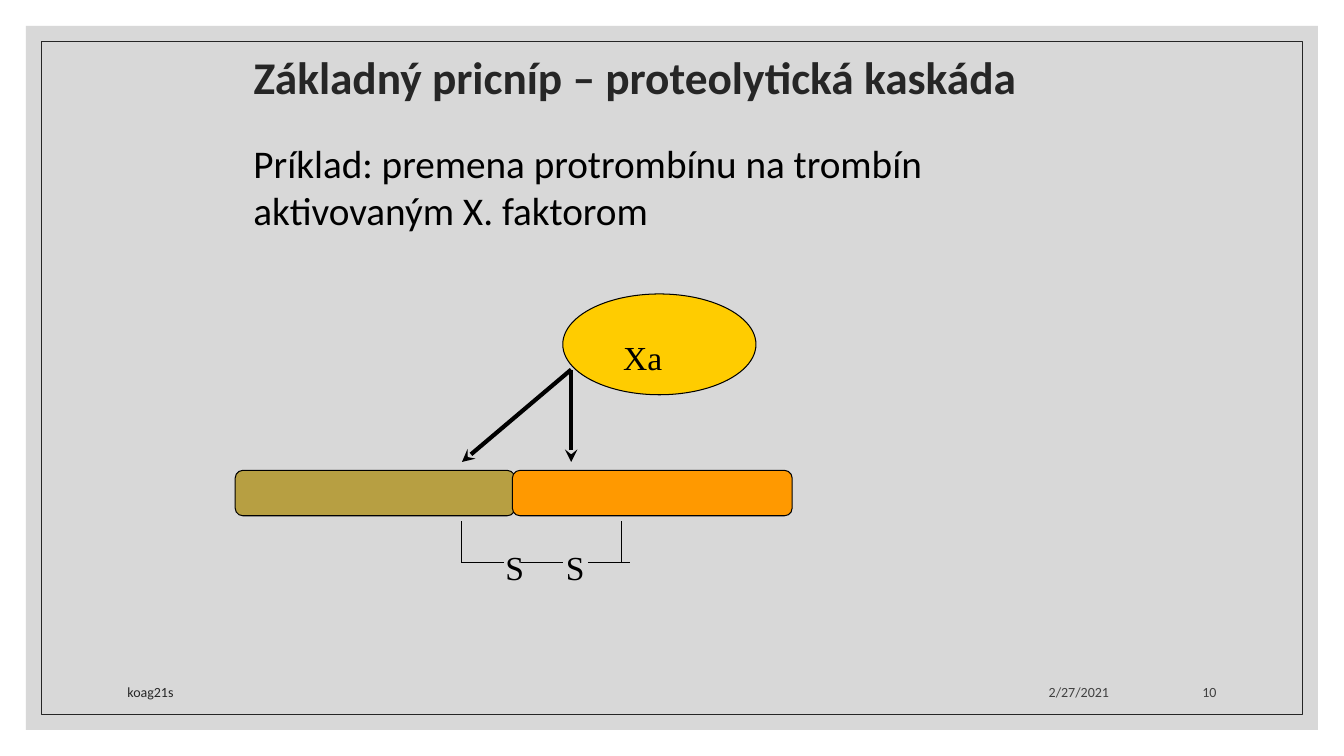
from lxml.etree import SubElement
from pptx import Presentation
from pptx.dml.color import RGBColor
from pptx.enum.shapes import MSO_CONNECTOR, MSO_SHAPE
from pptx.enum.text import MSO_ANCHOR, PP_ALIGN
from pptx.oxml.ns import qn
from pptx.util import Inches, Pt

BLACK = RGBColor(0x00, 0x00, 0x00)
DARK = RGBColor(0x26, 0x26, 0x26)
SOFT = RGBColor(0x40, 0x40, 0x40)
GREY = RGBColor(0xBF, 0xBF, 0xBF)
OLIVE = RGBColor(0xB7, 0x9F, 0x42)
ORANGE = RGBColor(0xFF, 0x99, 0x00)
GOLD = RGBColor(0xFF, 0xCC, 0x00)
SANS, SERIF = "Calibri", "Times New Roman"
COLS, ROWS = 160, 90
CELL = Inches(1) / 12

deck = Presentation()
deck.slide_width, deck.slide_height = int(COLS * CELL), int(ROWS * CELL)
slide = deck.slides.add_slide(deck.slide_layouts[6])


def write(words, box, size, color, font=SANS, bold=False,
          anchor=MSO_ANCHOR.TOP, align=PP_ALIGN.LEFT, pitch=1.0):
    frame = slide.shapes.add_textbox(*[int(n * CELL) for n in box]).text_frame
    frame.word_wrap = True
    frame.vertical_anchor = anchor
    para = frame.paragraphs[0]
    para.alignment, para.line_spacing = align, pitch
    run = para.add_run()
    run.text = words
    run.font.name, run.font.size, run.font.bold = font, Pt(size), bold
    run.font.color.rgb = color


def link(start, end, width=0.75, arrow=False):
    ends = [int(n * CELL) for n in start + end]
    line = slide.shapes.add_connector(MSO_CONNECTOR.STRAIGHT, *ends)
    line.line.color.rgb, line.line.width = BLACK, Pt(width)
    if arrow:
        SubElement(line.line._get_or_add_ln(), qn("a:tailEnd"), type="stealth")
    SubElement(line._element.spPr, qn("a:effectLst"))


# Frame, the two halves of prothrombin, and the active factor
back, rim = 3.1, 4.9
bar, tall = 33.3, 5.4
for kind, box, fill, edge, width in (
    (MSO_SHAPE.RECTANGLE, (back, back, COLS - 2 * back, ROWS - 2 * back), GREY, None, 0),
    (MSO_SHAPE.RECTANGLE, (rim, rim, COLS - 2 * rim, ROWS - 2 * rim), None, DARK, 0.5),
    (MSO_SHAPE.ROUNDED_RECTANGLE, (28, 56, bar, tall), OLIVE, BLACK, 0.75),
    (MSO_SHAPE.ROUNDED_RECTANGLE, (61, 56, bar, tall), ORANGE, BLACK, 0.75),
    (MSO_SHAPE.OVAL, (67, 35, 23, 12), GOLD, BLACK, 0.75),
):
    shape = slide.shapes.add_shape(kind, *[int(n * CELL) for n in box])
    shape.shadow.inherit = False
    if fill is None:
        shape.fill.background()
    else:
        shape.fill.solid()
        shape.fill.fore_color.rgb = fill
    if edge is None:
        shape.line.fill.background()
        tint = shape._element.spPr.find(".//" + qn("a:srgbClr"))
        SubElement(tint, qn("a:alpha"), val="60000")
    else:
        shape.line.color.rgb, shape.line.width = edge, Pt(width)

# Headings
write("Základný pricníp – proteolytická kaskáda", (29, 4, 105, 11), 32.4, DARK,
      bold=True, anchor=MSO_ANCHOR.MIDDLE, pitch=0.9)
write("Príklad: premena protrombínu na trombín aktivovaným X. faktorom",
      (29, 16, 102, 14), 28, BLACK)

# Factor name and cleavage arrows
write("Xa", (73, 39.5, 9, 6), 24, BLACK, SERIF)
for col in (55, 68):
    link((68, 44), (col, 55), 3, True)

# Disulphide bridge
for col in (59, 66.2):
    write("S", (col, 64.5, 6, 6), 24, BLACK, SERIF)
for col in (55, 62, 70):
    link((col, 67), (col + 5, 67))
for col in (55, 74):
    link((col, 67), (col, 62))

# Footer
for words, left, width, color, align in (
    ("koag21s", 14, 76.3, DARK, PP_ALIGN.LEFT),
    ("2/27/2021", 95.3, 37.9, SOFT, PP_ALIGN.RIGHT),
    ("10", 135, 11, SOFT, PP_ALIGN.RIGHT),
):
    write(words, (left, 79.2, width, 4.8), 10, color,
          anchor=MSO_ANCHOR.BOTTOM, align=align)

deck.save("out.pptx")
